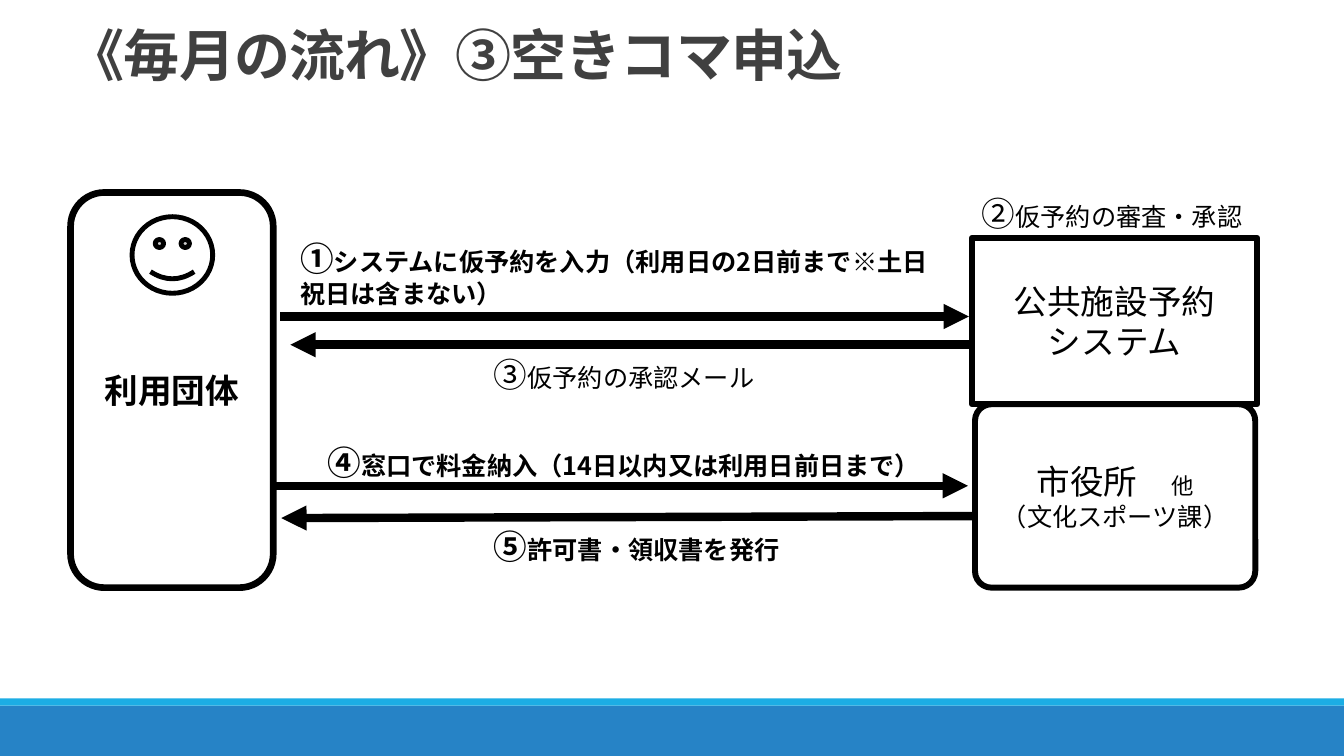
from collections import namedtuple

from pptx import Presentation
from pptx import util as u
from pptx.dml.color import RGBColor
from pptx.enum import shapes, text
from pptx.oxml.ns import qn
from lxml import etree

Box = namedtuple("Box", "left top width height")

BLACK = RGBColor(0x00, 0x00, 0x00)
WHITE = RGBColor(0xFF, 0xFF, 0xFF)
TITLE_GREY = RGBColor(0x40, 0x40, 0x40)
BAND_BLUE = RGBColor(0x26, 0x83, 0xC6)
STRIPE_BLUE = RGBColor(0x1C, 0xAD, 0xE4)
JAPANESE = "Noto Sans CJK JP"
SHAPE = shapes.MSO_SHAPE


def inside(region, left, top, width, height):
    """Box placed relative to the corner of a region."""
    return Box(region.left + left, region.top + top, width, height)


def lengths(box):
    return [u.Inches(value) for value in box]


def write(para, words, size, bold=False, color=BLACK, latin=JAPANESE):
    span = para.add_run()
    span.text = words
    font = span.font
    font.size, font.bold, font.name = u.Pt(size), bold, latin
    font.color.rgb = color
    props = span._r.get_or_add_rPr()
    east_asian = etree.Element(qn("a:ea"), typeface=JAPANESE)
    props.find(qn("a:latin")).addnext(east_asian)
    return span


def add_block(page, kind, box, fill, line_width=None):
    block = page.shapes.add_shape(kind, *lengths(box))
    block.shadow.inherit = False
    block.fill.solid()
    block.fill.fore_color.rgb = fill
    if line_width:
        block.line.color.rgb = BLACK
        block.line.width = u.Pt(line_width)
    else:
        block.line.fill.background()
    return block


def fill_block(block, lines, bold=False):
    """Centre lines of (words, size) pairs in a block."""
    frame = block.text_frame
    frame.word_wrap = True
    frame.vertical_anchor = text.MSO_ANCHOR.MIDDLE
    for index, pieces in enumerate(lines):
        para = frame.add_paragraph() if index else frame.paragraphs[0]
        para.alignment = text.PP_ALIGN.CENTER
        for words, size in pieces:
            write(para, words, size, bold)


def add_step(page, box, number, words, bold):
    label = page.shapes.add_textbox(*lengths(box))
    frame = label.text_frame
    frame.word_wrap = True
    frame.auto_size = text.MSO_AUTO_SIZE.SHAPE_TO_FIT_TEXT
    write(frame.paragraphs[0], number, 24, bold)
    write(frame.paragraphs[0], words, 18, bold)


def add_arrow(page, region, start, end):
    points = [u.Inches(corner + offset) for point in (start, end)
              for corner, offset in zip(region[:2], point)]
    arrow = page.shapes.add_connector(shapes.MSO_CONNECTOR.STRAIGHT, *points)
    arrow.line.color.rgb = BLACK
    arrow.line.width = u.Pt(6)
    etree.SubElement(arrow.line._get_or_add_ln(), qn("a:tailEnd"), type="triangle")
    etree.SubElement(arrow._element.spPr, qn("a:effectLst"))


def build_footer(page, box):
    stripe = 0.07
    add_block(page, SHAPE.RECTANGLE,
              inside(box, 0, stripe, box.width, box.height - stripe), BAND_BLUE)
    add_block(page, SHAPE.RECTANGLE, inside(box, 0, 0, box.width, stripe), STRIPE_BLUE)


def build_title(page, box, words):
    title = page.shapes.title
    title.left, title.top, title.width, title.height = lengths(box)
    frame = title.text_frame
    frame.word_wrap = True
    frame.auto_size = text.MSO_AUTO_SIZE.NONE
    frame.vertical_anchor = text.MSO_ANCHOR.TOP
    frame.margin_top = 0
    para = frame.paragraphs[0]
    para.alignment = text.PP_ALIGN.LEFT
    para.line_spacing = 0.85
    span = write(para, words, 40, True, TITLE_GREY, "Calibri")
    span._r.get_or_add_rPr().set("spc", "-50")


def build_parties(page, box):
    # User group on the left
    group = add_block(page, SHAPE.ROUNDED_RECTANGLE,
                      inside(box, 0, 0.05, 2.01, 3.92), WHITE, 4.75)
    fill_block(group, [[("利用団体", 24)]], bold=True)
    add_block(page, SHAPE.SMILEY_FACE, inside(box, 0.61, 0.29, 0.8, 0.76), WHITE, 3.5)

    # City hall and booking system on the right
    city_hall = add_block(page, SHAPE.ROUNDED_RECTANGLE,
                          inside(box, 8.97, 2.15, 2.78, 1.82), WHITE, 4.25)
    city_hall.adjustments[0] = 0.09
    fill_block(city_hall, [[("市役所　", 24), ("他", 16)], [("（文化スポーツ課）", 18)]])
    system = add_block(page, SHAPE.RECTANGLE,
                       inside(box, 8.94, 0.5, 2.83, 1.65), WHITE, 4.25)
    fill_block(system, [[("公共施設予約", 24)], [("システム", 24)]])


def build_steps(page, box):
    # Arrows between the parties
    for start, end in (
        ((2.08, 1.28), (8.91, 1.28)),
        ((8.97, 1.56), (2.18, 1.56)),
        ((2.01, 2.96), (8.9, 2.96)),
        ((8.94, 3.26), (2.09, 3.28)),
    ):
        add_arrow(page, box, start, end)

    # Numbered step labels
    for place, number, words, bold in (
        ((2.18, 0.45, 6.48, 0.93), "①",
         "システムに仮予約を入力（利用日の2日前まで※土日祝日は含まない）", True),
        ((8.94, 0, 2.98, 0.58), "②", "仮予約の審査・承認", False),
        ((4.1, 1.6, 4.3, 0.5), "③", "仮予約の承認メール", False),
        ((2.45, 2.47, 6.36, 0.58), "④",
         "窓口で料金納入（14日以内又は利用日前日まで）", True),
        ((4.1, 3.31, 3.05, 0.5), "⑤", "許可書・領収書を発行", True),
    ):
        add_step(page, inside(box, *place), number, words, bold)


def main():
    deck = Presentation()
    deck.slide_width, deck.slide_height = u.Inches(13.33), u.Inches(7.5)
    page = deck.slides.add_slide(deck.slide_layouts[5])
    build_footer(page, Box(0, 6.93, 13.33, 0.57))
    build_title(page, Box(0.58, 0.31, 12.19, 0.83), "《毎月の流れ》③空きコマ申込")
    flow = Box(0.7, 1.86, 11.92, 3.97)
    build_parties(page, flow)
    build_steps(page, flow)
    deck.save("out.pptx")


if __name__ == "__main__":
    main()
